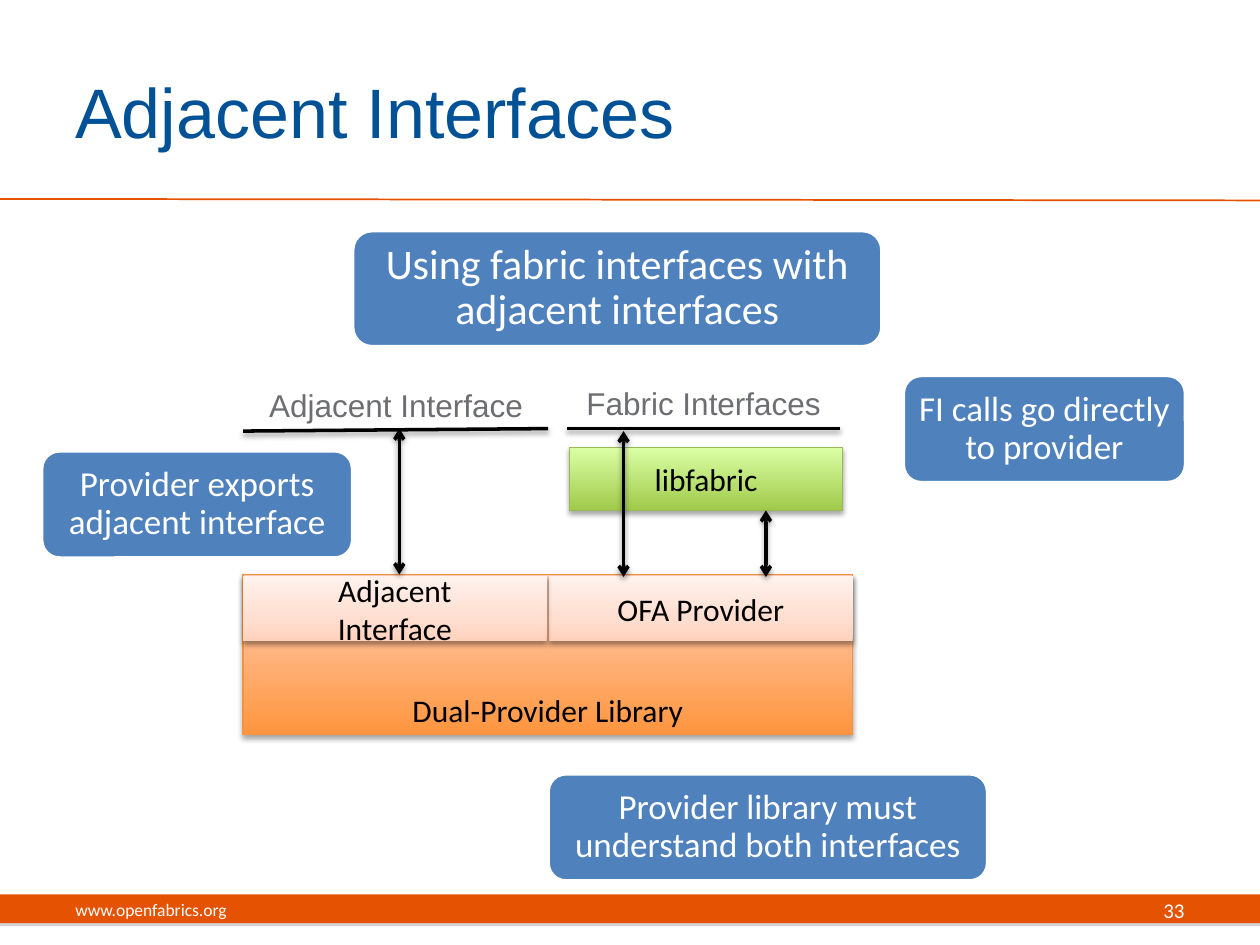
from typing import NamedTuple, Optional

from lxml.etree import SubElement
from pptx import Presentation
from pptx.dml.color import RGBColor
from pptx.enum.shapes import MSO_CONNECTOR, MSO_SHAPE
from pptx.enum.text import MSO_ANCHOR, PP_ALIGN
from pptx.oxml.ns import qn
from pptx.util import Cm, Pt

WHITE = RGBColor(0xFF, 0xFF, 0xFF)
BLACK = RGBColor(0x00, 0x00, 0x00)
GRAY = RGBColor(0x6D, 0x6E, 0x71)
SHADE = RGBColor(0x80, 0x80, 0x80)
NAVY = RGBColor(0x00, 0x51, 0x95)
BLUE = RGBColor(0x4F, 0x81, 0xBD)
RUST = RGBColor(0xE5, 0x53, 0x02)
LEAF = RGBColor(0x98, 0xB9, 0x55)
AMBER = RGBColor(0xF6, 0x92, 0x40)

# Gradient stops run from the bottom edge to the top: (percent, colour)
GREEN = ((0, RGBColor(0xA0, 0xCA, 0x4A)), (100, RGBColor(0xDA, 0xFF, 0xA5)))
ORANGE = ((0, RGBColor(0xFF, 0x95, 0x3E)), (100, RGBColor(0xFF, 0xD2, 0xBD)))
PEACH = ((0, RGBColor(0xFF, 0xD2, 0xBD)), (35, RGBColor(0xFF, 0xDE, 0xD0)),
         (100, RGBColor(0xFF, 0xF2, 0xED)))


class Box(NamedTuple):
    """Left, top, width and height in centimetres."""
    x: float
    y: float
    w: float
    h: float


class Block(NamedTuple):
    text: str
    box: Box
    stops: tuple
    edge: Optional[RGBColor] = None
    anchor: MSO_ANCHOR = MSO_ANCHOR.MIDDLE


class Call(NamedTuple):
    text: str
    box: Box
    size: int = 20


class Line(NamedTuple):
    x1: float
    y1: float
    x2: float
    y2: float


class Drop(NamedTuple):
    """Shadow colour, opacity in percent, blur and distance in points."""
    color: RGBColor
    alpha: int
    blur: float
    dist: float


SOFT = Drop(BLACK, 35, 3.1, 1.8)
DARK = Drop(BLACK, 38, 3.1, 1.6)
FOOT = Drop(SHADE, 35, 0, 1.8)


def put_color(node, color: RGBColor):
    return SubElement(node, qn("a:srgbClr"), val=str(color))


def put_drop(props, drop: Optional[Drop]) -> None:
    """Set the effect list, which stays empty without a shadow."""
    fx = props.find(qn("a:effectLst"))
    if fx is None:
        fx = SubElement(props, qn("a:effectLst"))
    if drop:
        node = SubElement(fx, qn("a:outerShdw"), blurRad=str(Pt(drop.blur)),
                          dist=str(Pt(drop.dist)), dir="5400000", rotWithShape="0")
        tint = put_color(node, drop.color)
        SubElement(tint, qn("a:alpha"), val=str(drop.alpha * 1000))


def put_stops(shape, stops: tuple) -> None:
    shape.fill.gradient()
    grad = shape._element.spPr.find(qn("a:gradFill"))
    for child in list(grad):
        grad.remove(child)
    items = SubElement(grad, qn("a:gsLst"))
    for part, color in stops:
        put_color(SubElement(items, qn("a:gs"), pos=str(part * 1000)), color)
    SubElement(grad, qn("a:lin"), ang="16200000", scaled="0")


def put_text(shape, text: str, *, size: int = 18, font: str = "Calibri",
             color: RGBColor = BLACK, align: PP_ALIGN = PP_ALIGN.CENTER,
             anchor: MSO_ANCHOR = MSO_ANCHOR.MIDDLE, pitch: float = 1.0,
             inset: Optional[float] = None) -> None:
    frame = shape.text_frame
    frame.word_wrap = True
    frame.vertical_anchor = anchor
    if inset is not None:
        frame.margin_left = frame.margin_right = Cm(inset)
        frame.margin_top = frame.margin_bottom = Cm(inset)
    para = frame.paragraphs[0]
    para.alignment = align
    para.line_spacing = pitch
    for i, part in enumerate(text.splitlines()):
        if i:
            para.add_line_break()
        run = para.add_run()
        run.text = part
        run.font.size, run.font.name = Pt(size), font
        run.font.color.rgb = color


def add_label(slide, text: str, box: Box, **form) -> None:
    put_text(slide.shapes.add_textbox(*map(Cm, box)), text, **form)


def add_box(slide, box: Box, *, kind=MSO_SHAPE.RECTANGLE, fill=None, stops=None,
            edge=None, width: float = 0.75, drop: Optional[Drop] = None):
    shape = slide.shapes.add_shape(kind, *map(Cm, box))
    if stops:
        put_stops(shape, stops)
    else:
        shape.fill.solid()
        shape.fill.fore_color.rgb = fill
    if edge is None:
        shape.line.fill.background()
    else:
        shape.line.color.rgb = edge
        shape.line.width = Pt(width)
    shape.shadow.inherit = False
    put_drop(shape._element.spPr, drop)
    return shape


def add_block(slide, block: Block) -> None:
    shape = add_box(slide, block.box, stops=block.stops, edge=block.edge,
                    drop=SOFT if block.edge else DARK)
    put_text(shape, block.text, anchor=block.anchor)


def add_call(slide, call: Call) -> None:
    shape = add_box(slide, call.box, kind=MSO_SHAPE.ROUNDED_RECTANGLE,
                    fill=BLUE, edge=WHITE, width=2)
    put_text(shape, call.text, size=call.size, color=WHITE, pitch=0.9, inset=0.17)


def add_line(slide, line: Line, *, color: RGBColor = BLACK, width: float = 2,
             drop: Optional[Drop] = DARK, heads: bool = False) -> None:
    link = slide.shapes.add_connector(MSO_CONNECTOR.STRAIGHT, *map(Cm, line))
    link.line.color.rgb = color
    link.line.width = Pt(width)
    if heads:
        for tag in ("a:headEnd", "a:tailEnd"):
            SubElement(link.line._get_or_add_ln(), qn(tag), type="arrow")
    put_drop(link._element.spPr, drop)


def main() -> None:
    deck = Presentation()
    deck.slide_width, deck.slide_height = Cm(25.4), Cm(19.05)
    slide = deck.slides.add_slide(deck.slide_layouts[6])

    # Title and footer
    add_box(slide, Box(0, 18.03, 25.4, 0.58), fill=RUST, drop=FOOT)
    add_line(slide, Line(0, 4.01, 25.4, 4.04), color=RUST, width=1, drop=None)
    add_label(slide, "Adjacent Interfaces", Box(1.27, 0.64, 20.75, 3.18),
              size=40, font="Arial", color=NAVY, align=PP_ALIGN.LEFT)
    add_label(slide, "www.openfabrics.org", Box(1.27, 17.83, 8.05, 1.02),
              size=10, color=WHITE, align=PP_ALIGN.LEFT)
    add_label(slide, "33", Box(18.21, 17.83, 5.92, 1.02),
              size=12, color=WHITE, align=PP_ALIGN.RIGHT)

    # Software layers
    for block in (
        Block("libfabric", Box(11.48, 9.02, 5.51, 1.27), GREEN, LEAF),
        Block("Dual-Provider Library", Box(4.9, 11.58, 12.29, 3.23), ORANGE,
              AMBER, MSO_ANCHOR.BOTTOM),
        Block("OFA Provider", Box(11.07, 11.61, 6.12, 1.32), PEACH),
        Block("Adjacent\nInterface", Box(4.9, 11.61, 6.12, 1.32), PEACH),
    ):
        add_block(slide, block)

    # Interface names and their lines
    for text, box, line in (
        ("Adjacent Interface", Box(4.9, 7.65, 6.17, 1.02), Line(4.9, 8.69, 11.05, 8.64)),
        ("Fabric Interfaces", Box(11.43, 7.62, 5.51, 1.02), Line(11.43, 8.64, 16.94, 8.64)),
    ):
        add_line(slide, line)
        add_label(slide, text, box, font="Arial", color=GRAY, anchor=MSO_ANCHOR.TOP)

    # Two-way arrows
    for x, top, end in ((8.05, 8.64, 11.58), (12.57, 8.69, 11.63), (15.44, 10.29, 11.63)):
        add_line(slide, Line(x, top, x, end), heads=True)

    # Callouts
    for call in (
        Call("Using fabric interfaces with adjacent interfaces", Box(7.11, 4.65, 10.67, 2.34), 24),
        Call("FI calls go directly to provider", Box(18.21, 7.57, 5.69, 2.16)),
        Call("Provider library must understand both interfaces", Box(11.05, 15.6, 8.86, 2.16)),
        Call("Provider exports adjacent interface", Box(0.84, 9.09, 6.27, 2.16)),
    ):
        add_call(slide, call)

    deck.save("out.pptx")


if __name__ == "__main__":
    main()
